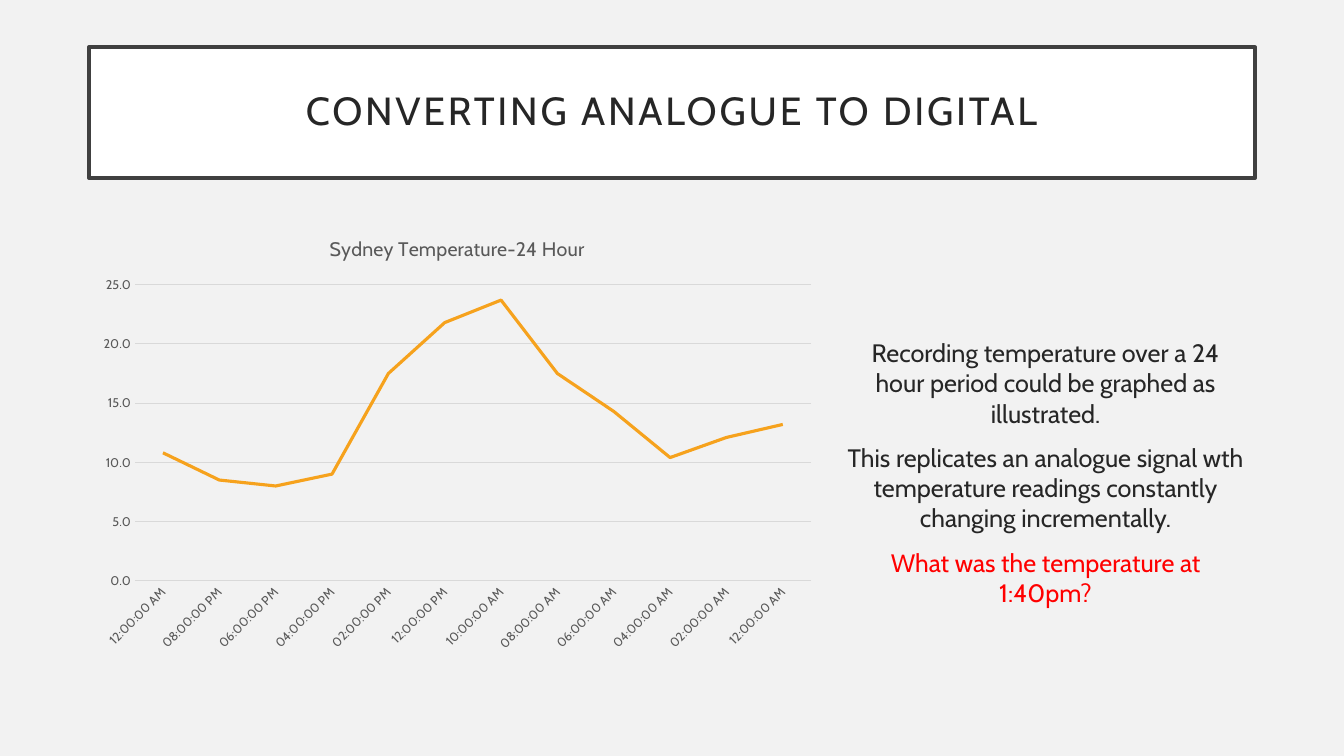
from pptx import Presentation
from pptx.chart.data import CategoryChartData
from pptx.dml.color import RGBColor
from pptx.enum.chart import XL_CHART_TYPE, XL_TICK_MARK
from pptx.enum.shapes import MSO_SHAPE
from pptx.enum.text import MSO_ANCHOR, PP_ALIGN
from pptx.util import Cm, Pt

FONT = "Cabin"
INK, GREY, RULE = "262626", "595959", "D9D9D9"
TIMES = ["12:00:00 AM", "08:00:00 PM", "06:00:00 PM", "04:00:00 PM",
         "02:00:00 PM", "12:00:00 PM", "10:00:00 AM", "08:00:00 AM",
         "06:00:00 AM", "04:00:00 AM", "02:00:00 AM", "12:00:00 AM"]
TEMPERATURES = [10.8, 8.5, 8, 9, 17.5, 21.8, 23.7, 17.5, 14.3, 10.4, 12.1, 13.2]
NOTES = [
    ("Recording temperature over a 24 hour period could be graphed as illustrated.", INK),
    ("This replicates an analogue signal wth temperature readings constantly "
     "changing incrementally.", INK),
    ("What was the temperature at 1:40pm?", "FF0000"),
]


def color(hex_string):
    return RGBColor.from_string(hex_string)


def set_all(target, values):
    for name, value in values.items():
        setattr(target, name, value)


def style_font(font, size, hex_string):
    set_all(font, {"name": FONT, "size": Pt(size), "bold": False})
    font.color.rgb = color(hex_string)


def style_line(line, hex_string, width):
    line.color.rgb = color(hex_string)
    line.width = Pt(width)


def add_title(slide, text):
    shape = slide.shapes.add_shape(
        MSO_SHAPE.RECTANGLE, Cm(2.24), Cm(1.19), Cm(29.39), Cm(3.3))
    shape.shadow.inherit = False
    shape.fill.solid()
    shape.fill.fore_color.rgb = color("FFFFFF")
    style_line(shape.line, "404040", 2.5)
    set_all(shape.text_frame, {"word_wrap": True, "vertical_anchor": MSO_ANCHOR.MIDDLE})
    paragraph = shape.text_frame.paragraphs[0]
    set_all(paragraph, {"alignment": PP_ALIGN.CENTER, "line_spacing": 0.9})
    run = paragraph.add_run()
    run.text = text
    style_font(run.font, 28, INK)
    # Letter spacing in hundredths of a point
    run.font._element.set("spc", "200")


def add_notes(slide, notes):
    box = slide.shapes.add_textbox(Cm(21.08), Cm(8.38), Cm(10.54), Cm(6.88))
    frame = box.text_frame
    frame.word_wrap = True
    for index, (text, hex_string) in enumerate(notes):
        paragraph = frame.add_paragraph() if index else frame.paragraphs[0]
        paragraph.alignment = PP_ALIGN.CENTER
        if index:
            paragraph.space_before = Pt(10)
        run = paragraph.add_run()
        run.text = text
        style_font(run.font, 18, hex_string)


def style_axis(axis):
    set_all(axis, {"major_tick_mark": XL_TICK_MARK.NONE,
                   "minor_tick_mark": XL_TICK_MARK.NONE})
    style_font(axis.tick_labels.font, 9, GREY)


def add_temperature_chart(slide):
    data = CategoryChartData(number_format="0.0")
    data.categories = TIMES
    data.add_series("Series 1", TEMPERATURES)
    chart = slide.shapes.add_chart(
        XL_CHART_TYPE.LINE_STACKED, Cm(2.24), Cm(5.49), Cm(18.57), Cm(11.15), data).chart
    style_font(chart.font, 10, "000000")
    chart.has_legend = False

    # Chart title
    chart.has_title = True
    paragraph = chart.chart_title.text_frame.paragraphs[0]
    run = paragraph.add_run()
    run.text = "Sydney Temperature-24 Hour"
    style_font(run.font, 14, GREY)
    chart.chart_title.include_in_layout = False

    # Axes
    time_axis, value_axis = chart.category_axis, chart.value_axis
    style_axis(time_axis)
    style_axis(value_axis)
    style_line(time_axis.format.line, RULE, 0.75)
    time_axis._element.txPr.bodyPr.set("rot", "-2700000")
    value_axis.format.line.fill.background()
    set_all(value_axis, {"minimum_scale": 0, "maximum_scale": 25, "major_unit": 5,
                         "has_major_gridlines": True})
    style_line(value_axis.major_gridlines.format.line, RULE, 0.75)
    set_all(value_axis.tick_labels, {"number_format": "0.0",
                                     "number_format_is_linked": False})

    # Temperature line
    plot = chart.plots[0]
    plot.vary_by_categories = False
    series = plot.series[0]
    series.smooth = False
    style_line(series.format.line, "F6A21D", 2.25)


def main():
    presentation = Presentation()
    set_all(presentation, {"slide_width": Cm(33.87), "slide_height": Cm(19.05)})
    slide = presentation.slides.add_slide(presentation.slide_layouts[6])
    slide.background.fill.solid()
    slide.background.fill.fore_color.rgb = color("F2F2F2")
    add_title(slide, "CONVERTING ANALOGUE TO DIGITAL")
    add_notes(slide, NOTES)
    add_temperature_chart(slide)
    presentation.save("out.pptx")


if __name__ == "__main__":
    main()
